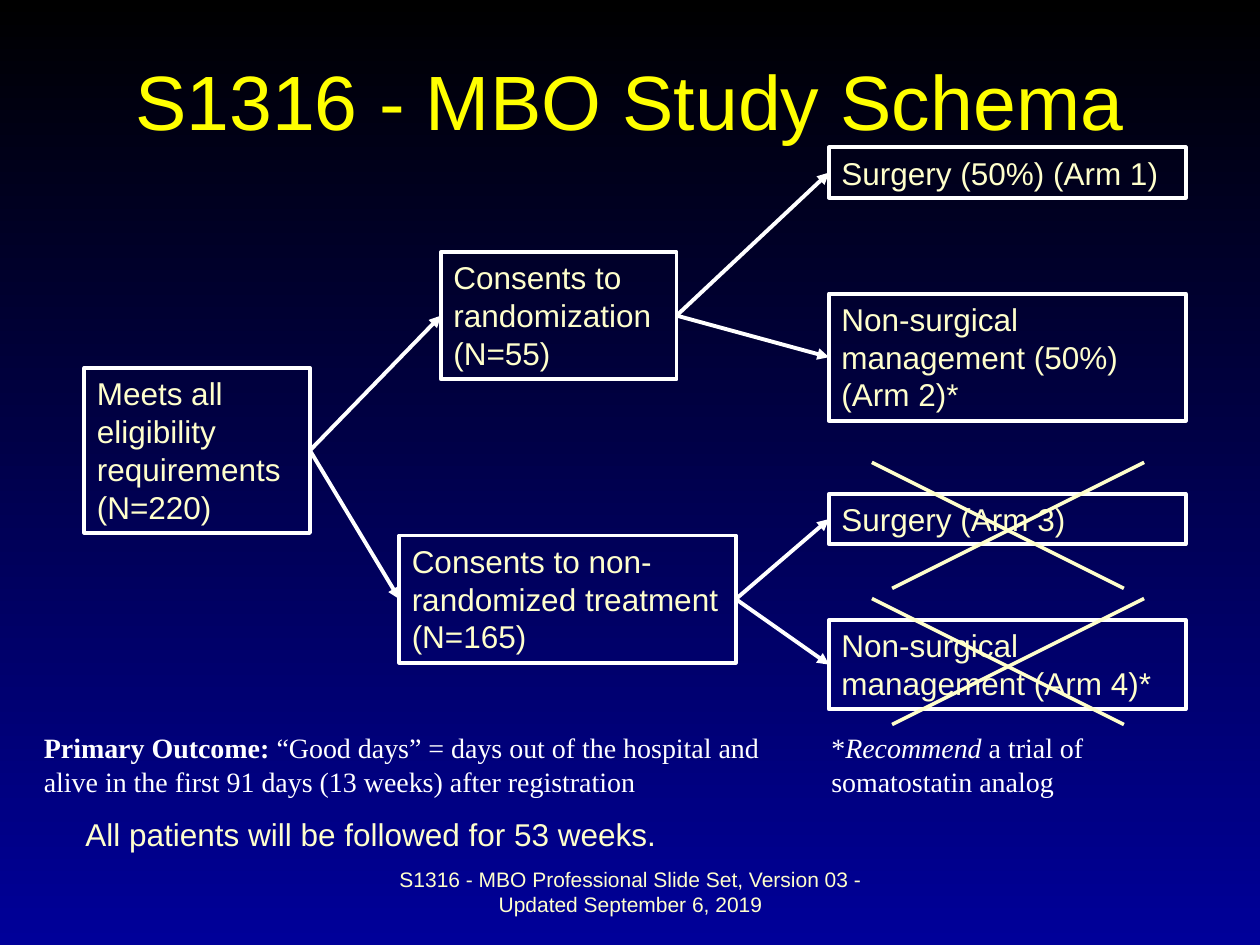
"""Build the S1316 MBO study schema slide."""
from dataclasses import dataclass

from pptx import Presentation
from pptx.dml.color import RGBColor
from pptx.enum.shapes import MSO_CONNECTOR as CONN, MSO_SHAPE as SHAPE
from pptx.enum.text import MSO_ANCHOR as ANCHOR, PP_ALIGN as ALIGN
from pptx.oxml.ns import qn
from pptx.util import Inches, Pt
from lxml.etree import SubElement

BLACK = RGBColor(0x00, 0x00, 0x00)
NAVY = RGBColor(0x00, 0x00, 0x99)
WHITE = RGBColor(0xFF, 0xFF, 0xFF)
YELLOW = RGBColor(0xFF, 0xFF, 0x00)
CREAM = RGBColor(0xFF, 0xFF, 0xCC)
LEFT_SITE, RIGHT_SITE = 1, 3
ARM_X, ARM_W = 6.58, 2.83


@dataclass
class Box:
    x: float
    y: float
    w: float
    h: float
    lines: tuple[str, ...]


@dataclass
class Label:
    x: float
    y: float
    w: float
    h: float
    runs: tuple[tuple[str, str], ...]
    size: int
    color: RGBColor
    font: str = "Arial"
    align: ALIGN = ALIGN.LEFT
    anchor: ANCHOR = ANCHOR.TOP


BOXES = {
    "eligible": Box(0.67, 2.92, 1.79, 1.31, ("Meets all", "eligibility", "requirements (N=220)")),
    "randomized": Box(3.5, 2, 1.87, 1.01, ("Consents to randomization", "(N=55)")),
    "chosen": Box(3.17, 4.25, 2.67, 1.01, ("Consents to non-randomized treatment", "(N=165)")),
    "arm1": Box(ARM_X, 1.17, ARM_W, 0.4, ("Surgery (50%) (Arm 1)",)),
    "arm2": Box(ARM_X, 2.33, ARM_W, 1.01, ("Non-surgical management (50%) (Arm 2)*",)),
    "arm3": Box(ARM_X, 3.92, ARM_W, 0.4, ("Surgery (Arm 3)",)),
    "arm4": Box(ARM_X, 4.92, ARM_W, 0.71, ("Non-surgical management (Arm 4)*",)),
}
ARROWS = [
    ("eligible", "randomized"), ("eligible", "chosen"),
    ("randomized", "arm1"), ("randomized", "arm2"),
    ("chosen", "arm3"), ("chosen", "arm4"),
]
LABELS = [
    Label(0.75, 0.33, 8.5, 0.92, (("S1316 - MBO Study Schema", ""),), 44, YELLOW,
          align=ALIGN.CENTER, anchor=ANCHOR.MIDDLE),
    Label(2.92, 6.83, 4.17, 0.5,
          (("S1316 - MBO Professional Slide Set, Version 03 - Updated September 6, 2019", ""),),
          12, CREAM, align=ALIGN.CENTER),
    Label(0.58, 6.42, 4.75, 0.4, (("All patients will be followed for 53 weeks.", ""),), 18, CREAM),
    Label(0.25, 5.75, 6.25, 0.64,
          (("Primary Outcome: ", "b"),
           ("“Good days” = days out of the hospital and alive in the first 91 days "
            "(13 weeks) after registration", "")),
          16, WHITE, "Times New Roman"),
    Label(6.5, 5.75, 3.17, 0.64,
          (("*", ""), ("Recommend", "i"), (" a trial of somatostatin analog", "")),
          16, WHITE, "Times New Roman"),
]
CROSS_TOPS = (4.75, 3.67)


def set_font(p, name: str, size: int, color: RGBColor) -> None:
    p.font.name = name
    p.font.size = Pt(size)
    p.font.color.rgb = color


def add_label(s, label: Label) -> None:
    sp = s.shapes.add_textbox(*map(Inches, (label.x, label.y, label.w, label.h)))
    tf = sp.text_frame
    tf.word_wrap = True
    tf.vertical_anchor = label.anchor
    p = tf.paragraphs[0]
    p.alignment = label.align
    set_font(p, label.font, label.size, label.color)
    for text, style in label.runs:
        r = p.add_run()
        r.text = text
        if style:
            r.font.bold = style == "b"
            r.font.italic = style == "i"


def add_box(s, box: Box):
    sp = s.shapes.add_shape(SHAPE.RECTANGLE, *map(Inches, (box.x, box.y, box.w, box.h)))
    sp.shadow.inherit = False
    sp.fill.background()
    sp.line.color.rgb = WHITE
    sp.line.width = Pt(2.25)
    tf = sp.text_frame
    tf.word_wrap = True
    tf.vertical_anchor = ANCHOR.TOP
    tf.text = "\n".join(box.lines)
    for p in tf.paragraphs:
        p.alignment = ALIGN.LEFT
        set_font(p, "Arial", 18, CREAM)
    return sp


def add_line(s, x1: float, y1: float, x2: float, y2: float, color: RGBColor, width: float):
    line = s.shapes.add_connector(CONN.STRAIGHT, *map(Inches, (x1, y1, x2, y2)))
    line.line.color.rgb = color
    line.line.width = Pt(width)
    SubElement(line._element.spPr, qn("a:effectLst"))
    return line


def add_arrow(s, start, end) -> None:
    arrow = add_line(s, 0, 0, 1, 1, WHITE, 2.25)
    arrow.begin_connect(start, RIGHT_SITE)
    arrow.end_connect(end, LEFT_SITE)
    SubElement(arrow.line._get_or_add_ln(), qn("a:tailEnd"), type="triangle")


def add_cross(s, top: float) -> None:
    add_line(s, 9.08, top, 7.08, top + 1, CREAM, 2)
    add_line(s, 6.92, top, 8.92, top + 1, CREAM, 2)


def set_background(s) -> None:
    fill = s.background.fill
    fill.gradient()
    fill.gradient_angle = 270
    for stop, color, position in zip(fill.gradient_stops, (BLACK, NAVY), (0, 1)):
        stop.color.rgb = color
        stop.position = position


def main() -> None:
    prs = Presentation()
    prs.slide_width, prs.slide_height = Inches(10), Inches(7.5)
    s = prs.slides.add_slide(prs.slide_layouts[6])
    set_background(s)
    for label in LABELS:
        add_label(s, label)
    shapes = {name: add_box(s, box) for name, box in BOXES.items()}
    for start, end in ARROWS:
        add_arrow(s, shapes[start], shapes[end])
    for top in CROSS_TOPS:
        add_cross(s, top)
    prs.save("out.pptx")


if __name__ == "__main__":
    main()
